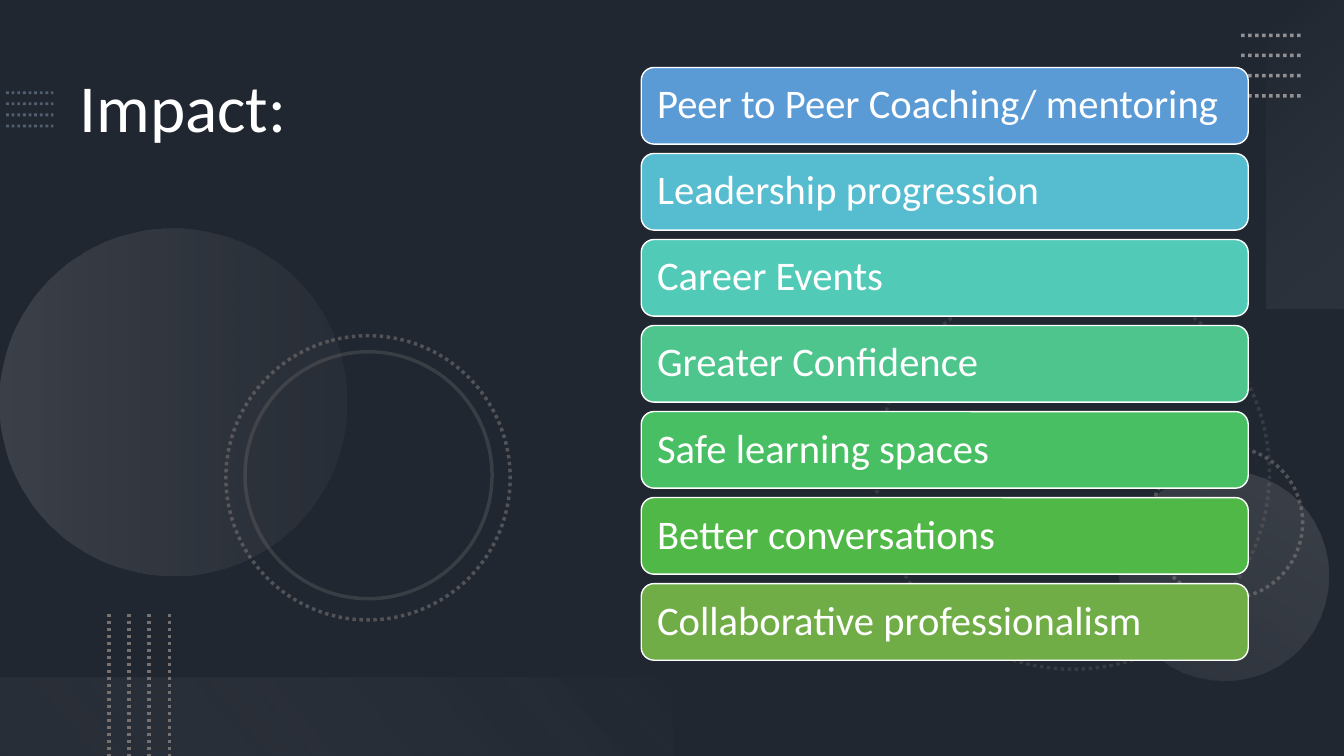
from pptx import Presentation
from pptx import util as u
from pptx.dml.color import RGBColor
from pptx.enum import dml, shapes, text
from pptx.oxml import ns, xmlchemy

COLORS = {
    "slate": "44546A", "black": "000000", "white": "FFFFFF", "steel": "8497B0",
    "gray": "767171", "silver": "AFABAB", "smoke": "F5F5F5", "mist": "F1F0F0",
}
IMPACTS = {
    "Peer to Peer Coaching/ mentoring": "5B9BD5",
    "Leadership progression": "56BCD0",
    "Career Events": "52CAB8",
    "Greater Confidence": "4DC58D",
    "Safe learning spaces": "49BF64",
    "Better conversations": "50B846",
    "Collaborative professionalism": "70AD47",
}


def rgb(name):
    """Return the colour for a palette name."""
    return RGBColor.from_string(COLORS[name])


def set_opacity(shape, *percents):
    """Give the colours of a shape their opacity, in order."""
    colors = shape._element.spPr.iter(ns.qn("a:srgbClr"))
    for color, percent in zip(colors, percents):
        alpha = xmlchemy.OxmlElement("a:alpha")
        alpha.set("val", str(percent * 1000))
        color.append(alpha)


def add_plain(page, kind, box, rotation=0):
    """Add an unfilled, unlined shape in the box."""
    shape = page.shapes.add_shape(kind, *map(u.Inches, box))
    shape.shadow.inherit = False
    shape.rotation = rotation
    shape.fill.background()
    shape.line.fill.background()
    return shape


def style_line(item, color, width, opacity, dotted=True):
    """Set colour, width, opacity and dotting of a line."""
    item.line.color.rgb = rgb(color)
    item.line.width = u.Pt(width)
    if dotted:
        item.line.dash_style = dml.MSO_LINE.ROUND_DOT
    set_opacity(item, opacity)


def add_gradient(page, kind, box, rotation, angle, stops):
    """Add a shape with a translucent two-stop gradient."""
    shape = add_plain(page, kind, box, rotation)
    shape.fill.gradient()
    shape.fill.gradient_angle = 360 - angle
    for stop, (position, color, _) in zip(shape.fill.gradient_stops, stops):
        stop.position = position
        stop.color.rgb = rgb(color)
    set_opacity(shape, *(opacity for _, _, opacity in stops))


def add_ring(page, box, rotation, opacity, dotted=True):
    """Add an outlined circle."""
    ring = add_plain(page, shapes.MSO_SHAPE.OVAL, box, rotation)
    style_line(ring, "gray", 2.5, opacity, dotted)


def add_dotted_lines(page, box, vertical, color, width, opacity):
    """Spread four dotted lines evenly across the box."""
    left, top, wide, high = box
    for index in range(4):
        if vertical:
            x = left + wide * index / 3
            ends = x, top, x, top + high
        else:
            y = top + high * index / 3
            ends = left, y, left + wide, y
        line = page.shapes.add_connector(
            shapes.MSO_CONNECTOR.STRAIGHT, *map(u.Inches, ends))
        style_line(line, color, width, opacity)
        line._element.spPr.append(xmlchemy.OxmlElement("a:effectLst"))


def add_backdrop(page, box):
    """Draw the dark background with its circles, bands and dots."""
    left, top, wide, high = box
    right, bottom = left + wide, top + high
    oval, rectangle = shapes.MSO_SHAPE.OVAL, shapes.MSO_SHAPE.RECTANGLE
    page.background.fill.solid()
    page.background.fill.fore_color.rgb = rgb("slate")
    shade = add_plain(page, rectangle, box)
    shade.fill.solid()
    shade.fill.fore_color.rgb = rgb("black")
    set_opacity(shade, 53)

    add_dotted_lines(page, (left + 0.06, top + 0.92, 0.47, 0.33), False, "steel", 2, 50)
    add_ring(page, (right - 4.64, top + 2.74, 3.9, 3.9), 75, 25)
    add_ring(page, (right - 1.92, top + 4.43, 1.51, 1.51), 270, 60)
    add_gradient(page, oval, (left, top + 2.27, 3.44, 3.44), 270, 90,
                 [(0, "silver", 20), (1, "gray", 10)])
    add_gradient(page, oval, (right - 2.23, top + 4.67, 2.08, 2.08), 210, 90,
                 [(0, "silver", 10), (1, "silver", 20)])
    add_ring(page, (left + 2.24, top + 3.33, 2.82, 2.82), 75, 60)
    add_ring(page, (left + 2.43, top + 3.49, 2.45, 2.45), 75, 30, dotted=False)
    add_gradient(page, rectangle, (right - 1.91, top + 1.14, 3.06, 0.78), 270, 140,
                 [(0, "smoke", 0), (1, "silver", 10)])
    add_dotted_lines(page, (right - 1.02, top + 0.35, 0.6, 0.6), False, "silver", 2.5, 80)
    add_gradient(page, rectangle, (left, bottom - 0.78, 6.67, 0.78), 180, 140,
                 [(0.1, "gray", 10), (1, "mist", 0)])
    add_dotted_lines(page, (left + 1.08, bottom - 1.41, 0.6, 1.41), True, "gray", 2.5, 100)


def write_text(shape, words, size):
    """Write one white, left-aligned line of text."""
    frame = shape.text_frame
    frame.word_wrap = True
    frame.text = words
    para = frame.paragraphs[0]
    para.alignment = text.PP_ALIGN.LEFT
    para.line_spacing = 0.9
    span = para.runs[0]
    span.font.name = "Calibri"
    span.font.size = u.Pt(size)
    span.font.color.rgb = rgb("white")


def add_title(page, box):
    """Place the slide title in the box."""
    write_text(page.shapes.add_textbox(*map(u.Inches, box)), "Impact:", 48)


def add_impact_list(page, box):
    """Stack one coloured card per impact in the box."""
    left, top, wide, high = box
    card_height = 0.76
    step = (high - card_height) / (len(IMPACTS) - 1)
    for index, (words, color) in enumerate(IMPACTS.items()):
        card = add_plain(page, shapes.MSO_SHAPE.ROUNDED_RECTANGLE,
                         (left, top + index * step, wide, card_height))
        card.fill.solid()
        card.fill.fore_color.rgb = RGBColor.from_string(color)
        card.line.color.rgb = rgb("white")
        card.line.width = u.Pt(1)
        frame = card.text_frame
        frame.vertical_anchor = text.MSO_ANCHOR.MIDDLE
        frame.margin_left = frame.margin_right = u.Inches(0.12)
        frame.margin_top = frame.margin_bottom = u.Inches(0.12)
        write_text(card, words, 29)


def main():
    """Build the impact slide and save the deck."""
    deck = Presentation()
    deck.slide_width, deck.slide_height = u.Inches(13.33), u.Inches(7.5)
    page = deck.slides.add_slide(deck.slide_layouts[6])
    add_backdrop(page, (0, 0, 13.33, 7.5))
    add_title(page, (0.69, 0.69, 5.41, 6.03))
    add_impact_list(page, (6.36, 0.67, 6.02, 5.88))
    deck.save("out.pptx")


if __name__ == "__main__":
    main()
